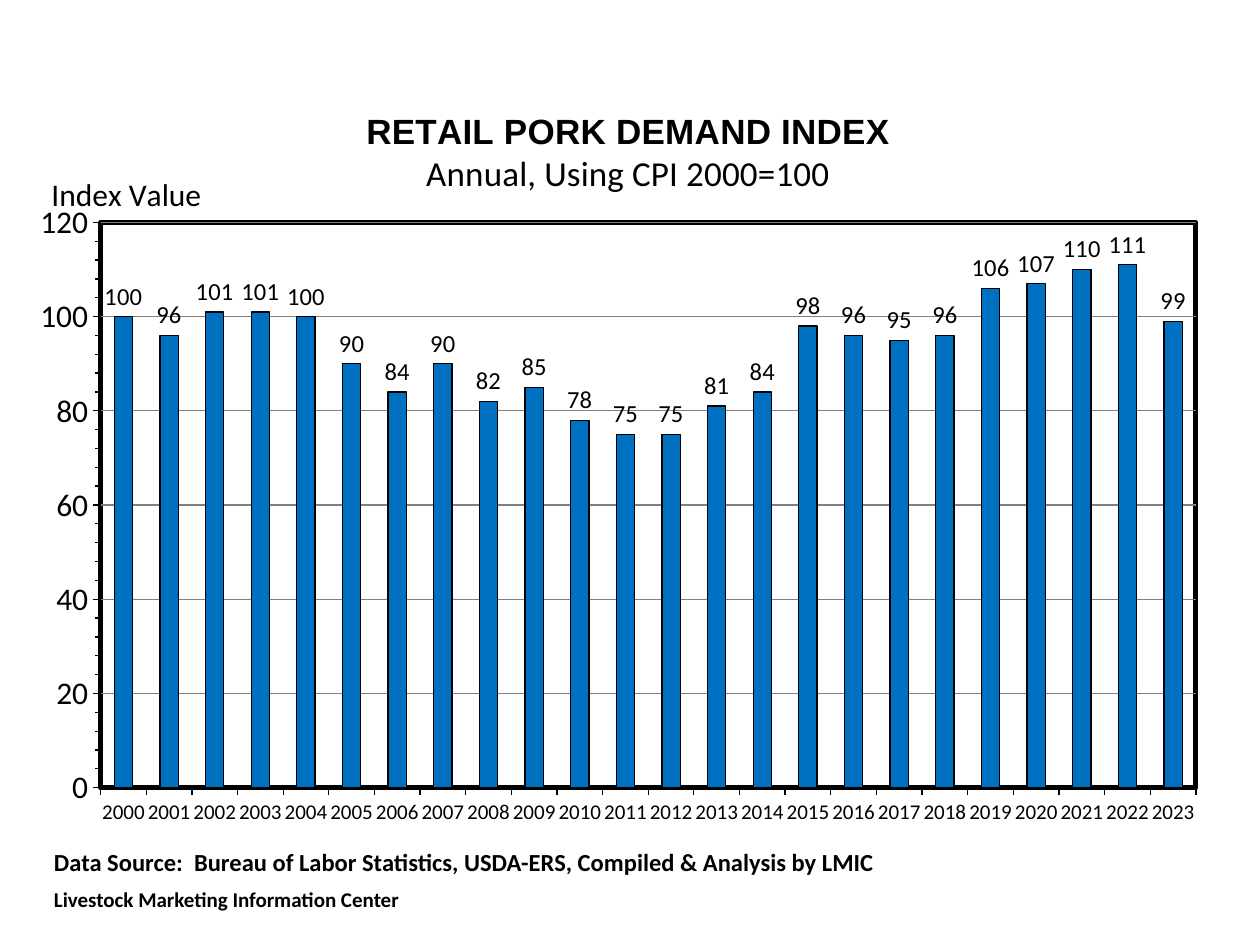
import pptx
import pptx.chart.data
import pptx.dml.color
import pptx.enum.chart
import pptx.oxml
import pptx.oxml.ns
import pptx.util
from pptx.util import Inches

COLORS = {"black": "000000", "white": "FFFFFF", "bar": "0070C0", "grid": "808080"}
YEARS = range(2000, 2024)
INDEX_VALUES = [100, 96, 101, 101, 100, 90, 84, 90, 82, 85, 78, 75,
                75, 81, 84, 98, 96, 95, 96, 106, 107, 110, 111, 99]
CHART_NAMESPACES = pptx.oxml.ns.nsdecls("c", "a")


def rgb(name):
    return pptx.dml.color.RGBColor.from_string(COLORS[name])


def format_font(font, size, bold=False, name="Calibri"):
    font.name = name
    font.size = pptx.util.Pt(size)
    font.bold = bold
    font.color.rgb = rgb("black")


def format_line(line, width=0.75, color="black"):
    line.color.rgb = rgb(color)
    line.width = pptx.util.Pt(width)


def add_text(text_frame, text, first=False, size=18, bold=False, name="Calibri", space_before=0):
    """Write one paragraph, reusing the frame's own paragraph when it is the first."""
    paragraph = text_frame.paragraphs[0] if first else text_frame.add_paragraph()
    if space_before:
        paragraph.space_before = pptx.util.Pt(space_before)
    run = paragraph.add_run()
    run.text = text
    format_font(run.font, size, bold, name)


def set_layout(parent, x, y, size=None):
    """Place a chart part by fractions of the chart; size also fixes the inner plot."""
    values = [("xMode", "edge"), ("yMode", "edge"), ("x", x), ("y", y)]
    if size:
        values = [("layoutTarget", "inner"), *values, ("w", size[0]), ("h", size[1])]
    content = "".join(f'<c:{tag} val="{value}"/>' for tag, value in values)
    layout = pptx.oxml.parse_xml(
        f"<c:layout {CHART_NAMESPACES}><c:manualLayout>{content}</c:manualLayout></c:layout>")
    for old_layout in parent.findall(pptx.oxml.ns.qn("c:layout")):
        parent.remove(old_layout)
    text = parent.find(pptx.oxml.ns.qn("c:tx"))
    parent.insert(0 if text is None else parent.index(text) + 1, layout)


def format_plot_area(chart):
    plot_area = chart._chartSpace.chart.plotArea
    set_layout(plot_area, 0.065, 0.185, (0.899, 0.758))
    plot_area.append(pptx.oxml.parse_xml(
        f'<c:spPr {CHART_NAMESPACES}>'
        f'<a:solidFill><a:srgbClr val="{COLORS["white"]}"/></a:solidFill>'
        f'<a:ln w="{pptx.util.Pt(3)}"><a:solidFill><a:srgbClr val="{COLORS["black"]}"/>'
        '</a:solidFill></a:ln></c:spPr>'))


def format_titles(chart):
    chart.has_title = True
    title = chart.chart_title
    title.include_in_layout = False
    add_text(title.text_frame, "RETAIL PORK DEMAND INDEX", first=True,
             size=20, bold=True, name="Arial")
    add_text(title.text_frame, "Annual, Using CPI 2000=100", size=20)
    set_layout(title._element, 0.28, 0.03)

    axis_title = chart.value_axis.axis_title
    add_text(axis_title.text_frame, "Index Value", first=True)
    body = axis_title._element.find(".//" + pptx.oxml.ns.qn("a:bodyPr"))
    body.set("rot", "0")
    body.set("vert", "horz")
    set_layout(axis_title._element, 0.02, 0.11)


def format_axes(chart):
    tick_mark = pptx.enum.chart.XL_TICK_MARK
    for axis, size in ((chart.category_axis, 12), (chart.value_axis, 18)):
        axis.major_tick_mark = tick_mark.OUTSIDE
        format_line(axis.format.line)
        format_font(axis.tick_labels.font, size)
    value_axis = chart.value_axis
    value_axis.minimum_scale, value_axis.maximum_scale = 0, 120
    value_axis.major_unit, value_axis.minor_unit = 20, 4
    value_axis.minor_tick_mark = tick_mark.OUTSIDE
    value_axis.has_major_gridlines = True
    format_line(value_axis.major_gridlines.format.line, color="grid")


def format_bars(chart):
    plot = chart.plots[0]
    plot.gap_width = 150
    plot.vary_by_categories = False
    bars = plot.series[0]
    bars.format.fill.solid()
    bars.format.fill.fore_color.rgb = rgb("bar")
    format_line(bars.format.line)
    labels = bars.data_labels
    labels.show_value = True
    labels.position = pptx.enum.chart.XL_LABEL_POSITION.OUTSIDE_END
    labels.number_format = "#,##0"
    labels.number_format_is_linked = False
    format_font(labels.font, 14)


def add_index_chart(slide):
    data = pptx.chart.data.CategoryChartData()
    data.categories = [str(year) for year in YEARS]
    data.add_series("Series 1", INDEX_VALUES)
    chart = slide.shapes.add_chart(
        pptx.enum.chart.XL_CHART_TYPE.COLUMN_CLUSTERED,
        Inches(0.17), Inches(0.67), Inches(9.67), Inches(5.92), data).chart
    chart.has_legend = False
    format_font(chart.font, 18)
    format_plot_area(chart)
    format_titles(chart)
    format_axes(chart)
    format_bars(chart)


def add_source_note(slide):
    box = slide.shapes.add_textbox(Inches(0.33), Inches(6.67), Inches(6.91), Inches(0.64))
    text_frame = box.text_frame
    text_frame.word_wrap = True
    add_text(text_frame, "Data Source:  Bureau of Labor Statistics, USDA-ERS, "
             "Compiled & Analysis by LMIC", first=True, size=14, bold=True)
    add_text(text_frame, "Livestock Marketing Information Center",
             size=12, bold=True, space_before=6)


def main():
    presentation = pptx.Presentation()
    presentation.slide_width = Inches(10)
    presentation.slide_height = Inches(7.5)
    slide = presentation.slides.add_slide(presentation.slide_layouts[6])
    add_index_chart(slide)
    add_source_note(slide)
    presentation.save("out.pptx")


if __name__ == "__main__":
    main()
